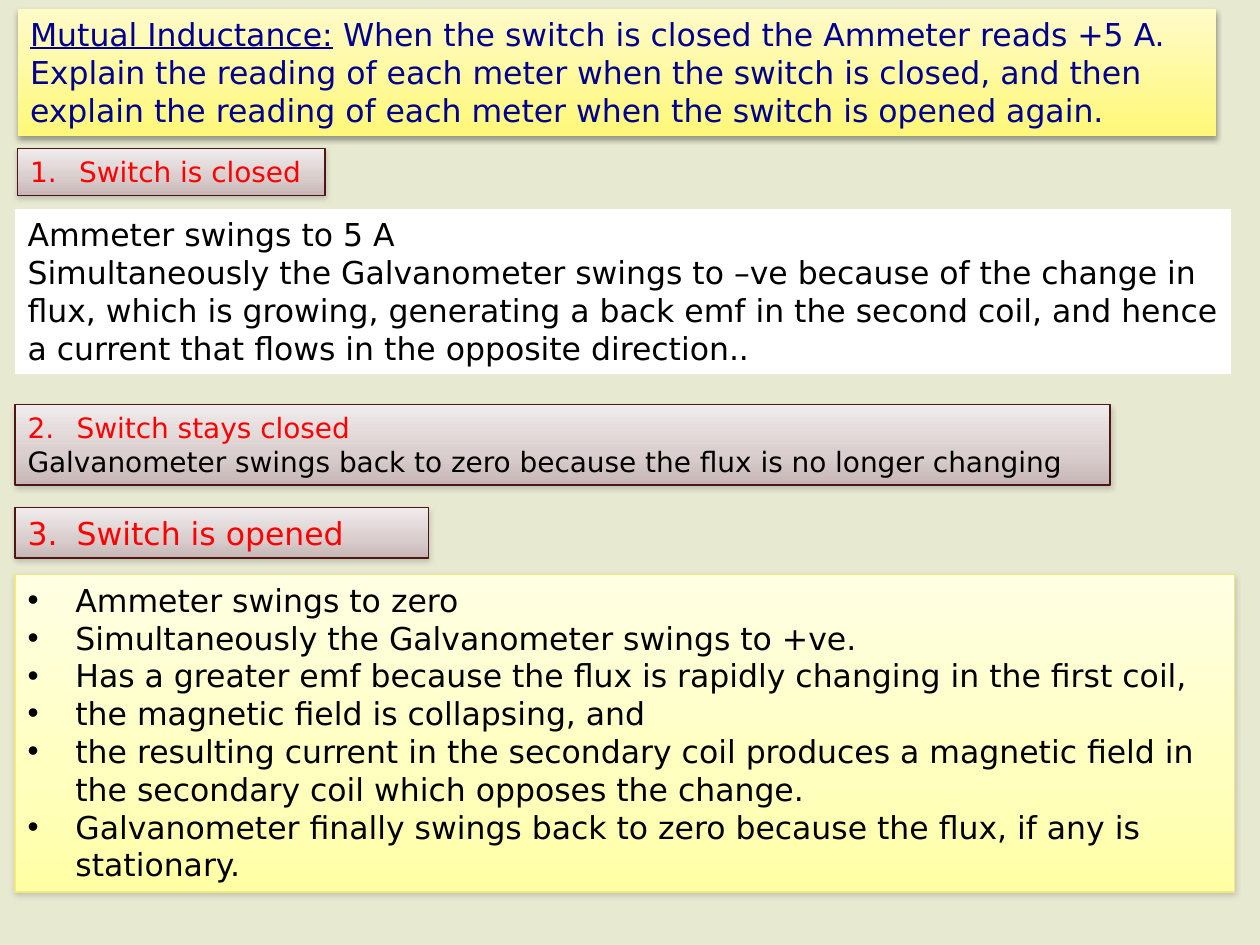
from lxml import etree
from pptx import Presentation
from pptx import util as u
from pptx.dml.color import RGBColor
from pptx.enum import shapes, text
from pptx.oxml.ns import qn

FONT = "DejaVu Sans"
CELL = u.Inches(0.1)  # grid of 100 columns by 75 rows
BLACK, RED, NAVY = "000000", "FF0000", "000090"
LEFT = 1.2

# Panel looks: gradient stops and angle, outline, shadow
SOFT = ("808080", 38, 3.1, 1.6)
LOOKS = {
    "title": dict(stops=[(0, "FFF879"), (100, "FFFBC8")], angle=270,
                  shade=("000000", 35, 3.1, 1.8)),
    "head": dict(stops=[(0, "F1ECEC"), (65, "D8CCCC"), (100, "C8B6B6")],
                 line="501616", shade=SOFT),
    "list": dict(stops=[(0, "FFFFE4"), (65, "FFFFBE"), (100, "FFFFA4")],
                 line="EFE980", shade=SOFT),
    "plain": dict(fill="FFFFFF"),
}


def rgb(code):
    return RGBColor.from_string(code)


def node(root, tag, **vals):
    return etree.SubElement(root, qn("a:" + tag), {k: str(v) for k, v in vals.items()})


def grade(props, stops, angle):
    grad = etree.Element(qn("a:gradFill"), rotWithShape="1")
    rows = node(grad, "gsLst")
    for pos, code in stops:
        node(node(rows, "gs", pos=pos * 1000), "srgbClr", val=code)
    node(grad, "lin", ang=angle * 60000, scaled=0)
    props.find(qn("a:prstGeom")).addnext(grad)


def shade(props, code, alpha, blur, dist):
    drop = node(props.find(qn("a:effectLst")), "outerShdw", blurRad=u.Pt(blur),
                dist=u.Pt(dist), dir=90 * 60000, rotWithShape=0)
    node(node(drop, "srgbClr", val=code), "alpha", val=alpha * 1000)


def panel(slide, box, look):
    """Add a styled rectangle and return its empty text frame."""
    form = LOOKS[look]
    shape = slide.shapes.add_shape(shapes.MSO_SHAPE.RECTANGLE,
                                   *(round(n * CELL) for n in box))
    shape.shadow.inherit = False
    if "line" in form:
        shape.line.color.rgb = rgb(form["line"])
        shape.line.width = u.Pt(0.75)
    else:
        shape.line.fill.background()
    if "fill" in form:
        shape.fill.solid()
        shape.fill.fore_color.rgb = rgb(form["fill"])
    else:
        grade(shape._element.spPr, form["stops"], form.get("angle", 90))
    if "shade" in form:
        shade(shape._element.spPr, *form["shade"])
    frame = shape.text_frame
    style = dict(word_wrap=True, vertical_anchor=text.MSO_ANCHOR.TOP,
                 auto_size=text.MSO_AUTO_SIZE.SHAPE_TO_FIT_TEXT)
    for key, val in style.items():
        setattr(frame, key, val)
    return frame


def write(para, words, size=18, color=BLACK, under=False):
    para.alignment = text.PP_ALIGN.LEFT
    run = para.add_run()
    run.text = words
    for key, val in dict(name=FONT, size=u.Pt(size), underline=under).items():
        setattr(run.font, key, val)
    run.font.color.rgb = rgb(color)


def hang(para, width):
    props = para._p.get_or_add_pPr()
    props.set("marL", str(u.Inches(width)))
    props.set("indent", str(-u.Inches(width)))
    return props


def title(slide, box, term, first, rest):
    frame = panel(slide, box, "title")
    top = frame.paragraphs[0]
    write(top, term, color=NAVY, under=True)
    write(top, first, color=NAVY)
    write(frame.add_paragraph(), rest, color=NAVY)


def head(slide, box, start, words, size=16, note=None):
    """Numbered heading, with an optional line beneath it."""
    frame = panel(slide, box, "head")
    para = frame.paragraphs[0]
    write(para, words, size, RED)
    props = hang(para, 0.39)
    node(props, "buFont", typeface="+mj-lt")
    node(props, "buAutoNum", type="arabicPeriod", startAt=start)
    if note:
        para = frame.add_paragraph()
        write(para, note, size)
        node(hang(para, 0.39), "buNone")


def body(slide, box, look, lines, dots=False):
    frame = panel(slide, box, look)
    for i, words in enumerate(lines):
        para = frame.add_paragraph() if i else frame.paragraphs[0]
        write(para, words)
        if dots:
            props = hang(para, 0.38)
            node(props, "buFont", typeface="Arial")
            node(props, "buChar", char="•")


def main():
    deck = Presentation()
    deck.slide_width, deck.slide_height = 100 * CELL, 75 * CELL
    slide = deck.slides.add_slide(deck.slide_layouts[6])
    slide.background.fill.solid()
    slide.background.fill.fore_color.rgb = rgb("E8E9D1")

    # Question
    title(slide, (1.4, 0.7, 95.1, 10.1), "Mutual Inductance:",
          " When the switch is closed the Ammeter reads +5 A.",
          "Explain the reading of each meter when the switch is closed, and then "
          "explain the reading of each meter when the switch is opened again.")

    # Switch closed
    head(slide, (1.4, 11.8, 24.4, 3.7), 1, "Switch is closed")
    body(slide, (LEFT, 16.6, 96.5, 13.1), "plain", [
        "Ammeter swings to 5 A",
        "Simultaneously the Galvanometer swings to –ve because of the change in "
        "flux, which is growing, generating a back emf in the second coil, and "
        "hence a current that flows in the opposite direction.."])

    # Switch stays closed
    head(slide, (LEFT, 32.1, 86.9, 6.4), 2, "Switch stays closed", note=(
        "Galvanometer swings back to zero because the flux is no longer changing"))

    # Switch opened
    head(slide, (LEFT, 40.3, 32.8, 4), 3, "Switch is opened", size=18)
    body(slide, (LEFT, 45.6, 96.8, 25.2), "list", [
        "Ammeter swings to zero",
        "Simultaneously the Galvanometer swings to +ve.",
        "Has a greater emf because the flux is rapidly changing in the first coil,",
        "the magnetic field is collapsing, and",
        "the resulting current in the secondary coil produces a magnetic field in "
        "the secondary coil which opposes the change.",
        "Galvanometer finally swings back to zero because the flux, if any is "
        "stationary."], dots=True)

    deck.save("out.pptx")


if __name__ == "__main__":
    main()
